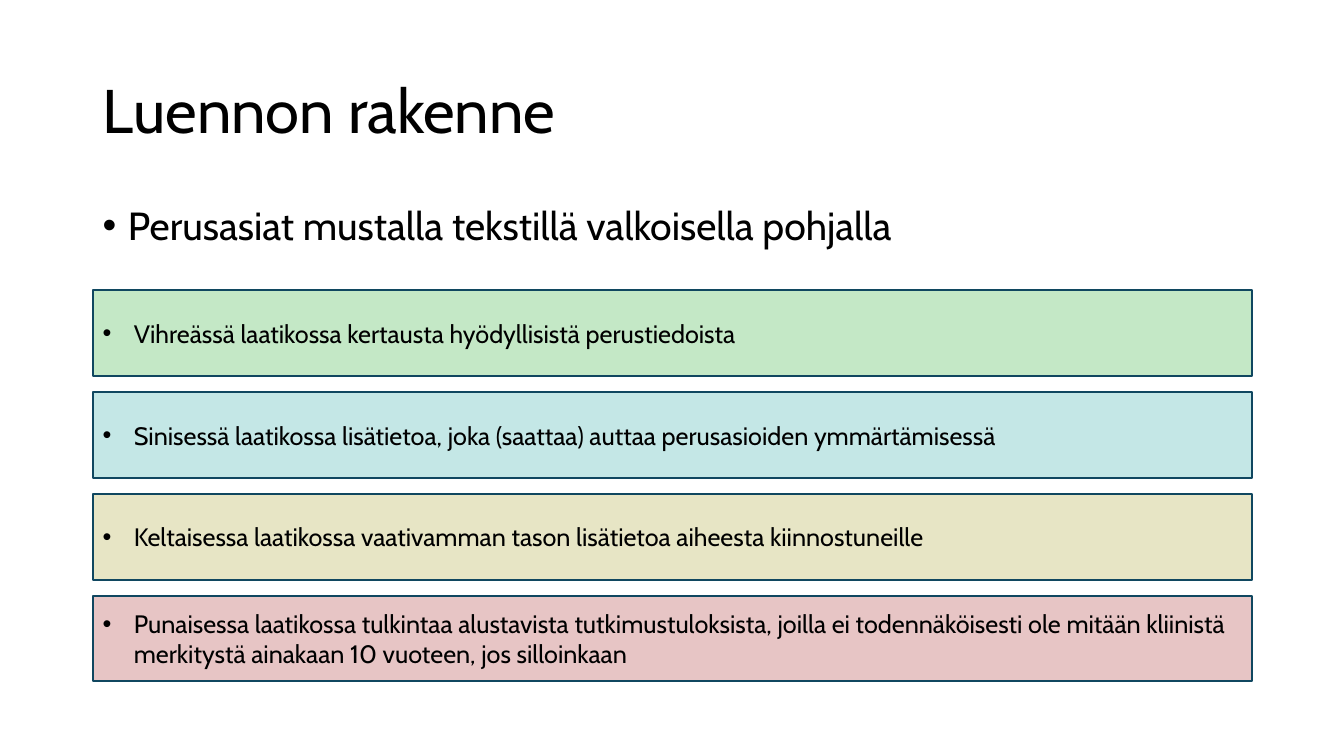
from lxml import etree
from pptx import Presentation
from pptx.dml.color import RGBColor
from pptx.enum.shapes import MSO_SHAPE
from pptx.enum.text import MSO_ANCHOR, MSO_AUTO_SIZE, PP_ALIGN
from pptx.oxml.ns import qn
from pptx.util import Inches, Pt

RECTANGLE = MSO_SHAPE.RECTANGLE
MIDDLE = MSO_ANCHOR.MIDDLE
NO_AUTOFIT = MSO_AUTO_SIZE.NONE
LEFT = PP_ALIGN.LEFT

FONT = "Cabin"
BLACK = RGBColor(0x00, 0x00, 0x00)
OUTLINE = RGBColor(0x10, 0x47, 0x60)
GREEN = RGBColor(0xC4, 0xE8, 0xC6)
BLUE = RGBColor(0xC4, 0xE7, 0xE6)
YELLOW = RGBColor(0xE7, 0xE5, 0xC5)
RED = RGBColor(0xE7, 0xC5, 0xC5)

# Shared column and the stack of boxes
COLUMN_LEFT, COLUMN_WIDTH = Inches(0.92), Inches(11.5)
BOX_TOP, BOX_HEIGHT, BOX_PITCH = Inches(2.88), Inches(0.85), Inches(1.01)

BOXES = [
    (GREEN, "Vihreässä laatikossa kertausta hyödyllisistä perustiedoista"),
    (BLUE, "Sinisessä laatikossa lisätietoa, joka (saattaa) auttaa "
           "perusasioiden ymmärtämisessä"),
    (YELLOW, "Keltaisessa laatikossa vaativamman tason lisätietoa aiheesta "
             "kiinnostuneille"),
    (RED, "Punaisessa laatikossa tulkintaa alustavista tutkimustuloksista, "
          "joilla ei todennäköisesti ole mitään kliinistä merkitystä "
          "ainakaan 10 vuoteen, jos silloinkaan"),
]


def add_bullet(para, indent):
    properties = para._p.get_or_add_pPr()
    properties.set("marL", str(indent))
    properties.set("indent", str(-indent))
    etree.SubElement(properties, qn("a:buFont"), typeface="Arial")
    etree.SubElement(properties, qn("a:buChar"), char="•")


def write_text(frame, text, size, indent=None):
    frame.word_wrap = True
    frame.auto_size = NO_AUTOFIT
    para = frame.paragraphs[0]
    para.text = text
    para.alignment = LEFT
    if indent is not None:
        add_bullet(para, indent)
    para.font.name = FONT
    para.font.size = Pt(size)
    para.font.color.rgb = BLACK
    return para


def set_title(page, text):
    title = page.shapes.title
    title.left, title.top = COLUMN_LEFT, Inches(0.4)
    title.width, title.height = COLUMN_WIDTH, Inches(1.45)
    title.text_frame.vertical_anchor = MIDDLE
    write_text(title.text_frame, text, 44).line_spacing = 0.9


def add_body(page, text):
    body = page.shapes.add_textbox(
        COLUMN_LEFT, Inches(2), COLUMN_WIDTH, Inches(0.7))
    write_text(body.text_frame, text, 28, Inches(0.25)).line_spacing = 0.9


def add_box(page, top, fill, text):
    box = page.shapes.add_shape(
        RECTANGLE, COLUMN_LEFT, top, COLUMN_WIDTH, BOX_HEIGHT)
    box.shadow.inherit = False
    box.fill.solid()
    box.fill.fore_color.rgb = fill
    box.line.color.rgb = OUTLINE
    box.line.width = Pt(1.5)
    box.text_frame.vertical_anchor = MIDDLE
    write_text(box.text_frame, text, 18, Inches(0.31))


def main():
    deck = Presentation()
    deck.slide_width, deck.slide_height = Inches(13.33), Inches(7.5)
    title_only = deck.slide_layouts[5]
    page = deck.slides.add_slide(title_only)

    # Heading and main point
    set_title(page, "Luennon rakenne")
    add_body(page, "Perusasiat mustalla tekstillä valkoisella pohjalla")

    # Colour-coded boxes
    for index, (fill, text) in enumerate(BOXES):
        add_box(page, BOX_TOP + index * BOX_PITCH, fill, text)

    deck.save("out.pptx")


if __name__ == "__main__":
    main()
